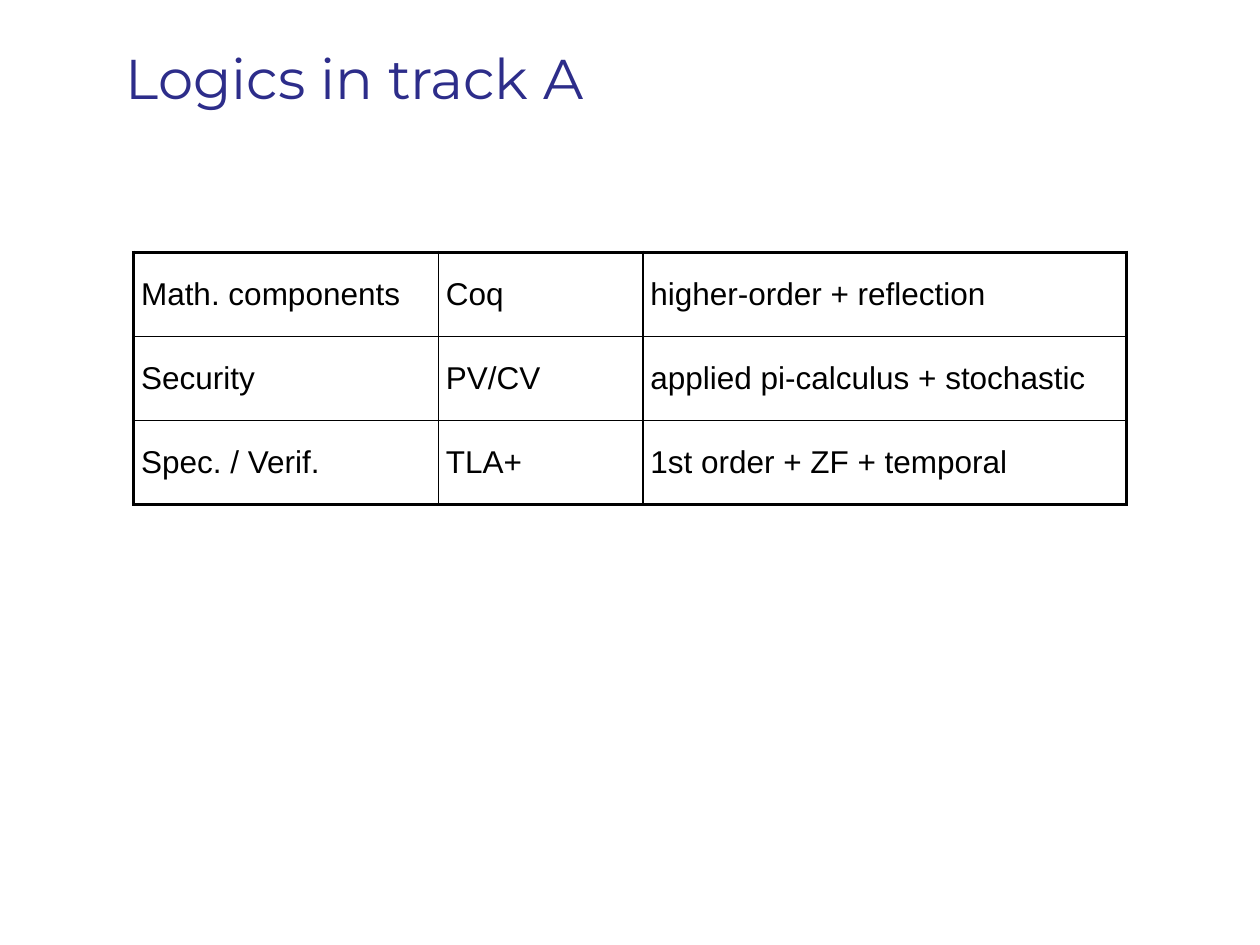
from typing import NamedTuple

from lxml.etree import SubElement
from pptx import Presentation
from pptx.dml.color import RGBColor
from pptx.enum.text import MSO_ANCHOR as Anchor
from pptx.oxml.ns import qn
from pptx.util import Emu, Inches, Pt

SLIDE_W, SLIDE_H = Inches(10), Inches(7.5)
BLACK, INDIGO = "000000", "2D2D8A"
OUTER, INNER = 2.25, 1  # border widths in points


class Box(NamedTuple):
    """Left, top, width and height as shares of the slide."""
    left: float
    top: float
    width: float
    height: float

    def lengths(self) -> list[Emu]:
        return [Emu(round(share * side))
                for share, side in zip(self, (SLIDE_W, SLIDE_H) * 2)]


class Logic(NamedTuple):
    topic: str
    tool: str
    foundation: str


TITLE_BOX = Box(0.086, 0.04, 0.864, 0.156)
TABLE_BOX = Box(0.106, 0.267, 0.788, 0.267)
COLUMN_SHARES = Logic(0.307, 0.206, 0.487)
LOGICS = [
    Logic("Math. components", "Coq", "higher-order + reflection"),
    Logic("Security", "PV/CV", "applied pi-calculus + stochastic"),
    Logic("Spec. / Verif.", "TLA+", "1st order + ZF + temporal"),
]


def color(hex_code: str) -> RGBColor:
    return RGBColor.from_string(hex_code)


def set_font(paragraph, name: str, size: float, hex_code: str) -> None:
    font = paragraph.font
    font.name, font.size = name, Pt(size)
    font.color.rgb = color(hex_code)


def add_title(slide, text: str) -> None:
    frame = slide.shapes.add_textbox(*TITLE_BOX.lengths()).text_frame
    frame.word_wrap = True
    frame.vertical_anchor = Anchor.TOP
    frame.margin_right = Inches(0.04)
    heading = frame.paragraphs[0]
    heading.text = text
    heading._p.get_or_add_pPr().set("marL", str(Inches(0.04)))
    set_font(heading, "Montserrat", 32, INDIGO)


def add_border(cell, side: str, width: float) -> None:
    line = SubElement(cell._tc.get_or_add_tcPr(), qn(f"a:ln{side}"), w=str(Pt(width)))
    fill = SubElement(line, qn("a:solidFill"))
    SubElement(fill, qn("a:srgbClr"), val=BLACK)


def fill_cell(cell, text: str, outer_sides: dict[str, bool]) -> None:
    cell.margin_left = cell.margin_right = Inches(0.06)
    cell.margin_top = cell.margin_bottom = Inches(0.06)
    cell.vertical_anchor = Anchor.MIDDLE
    for side, is_outer in outer_sides.items():
        add_border(cell, side, OUTER if is_outer else INNER)
    cell.fill.background()
    entry = cell.text_frame.paragraphs[0]
    entry.text = text
    tabs = SubElement(entry._p.get_or_add_pPr(), qn("a:tabLst"))
    SubElement(tabs, qn("a:tab"), pos=str(Inches(0.61)), algn="l")
    set_font(entry, "Arial", 18, BLACK)


def add_logics_table(slide, logics: list[Logic]) -> None:
    left, top, width, height = TABLE_BOX.lengths()
    last_row, last_col = len(logics) - 1, len(COLUMN_SHARES) - 1
    table = slide.shapes.add_table(
        last_row + 1, last_col + 1, left, top, width, height).table
    table.first_row = table.horz_banding = False
    for column, share in zip(table.columns, COLUMN_SHARES):
        column.width = Emu(round(width * share))
    for row, logic in enumerate(logics):
        for col, text in enumerate(logic):
            # Thick frame outside, thin grid inside
            outer_sides = {"L": col == 0, "R": col == last_col,
                           "T": row == 0, "B": row == last_row}
            fill_cell(table.cell(row, col), text, outer_sides)


def main() -> None:
    deck = Presentation()
    deck.slide_width, deck.slide_height = SLIDE_W, SLIDE_H
    slide = deck.slides.add_slide(deck.slide_layouts[6])
    add_logics_table(slide, LOGICS)
    add_title(slide, "Logics in track A")
    deck.save("out.pptx")


if __name__ == "__main__":
    main()
